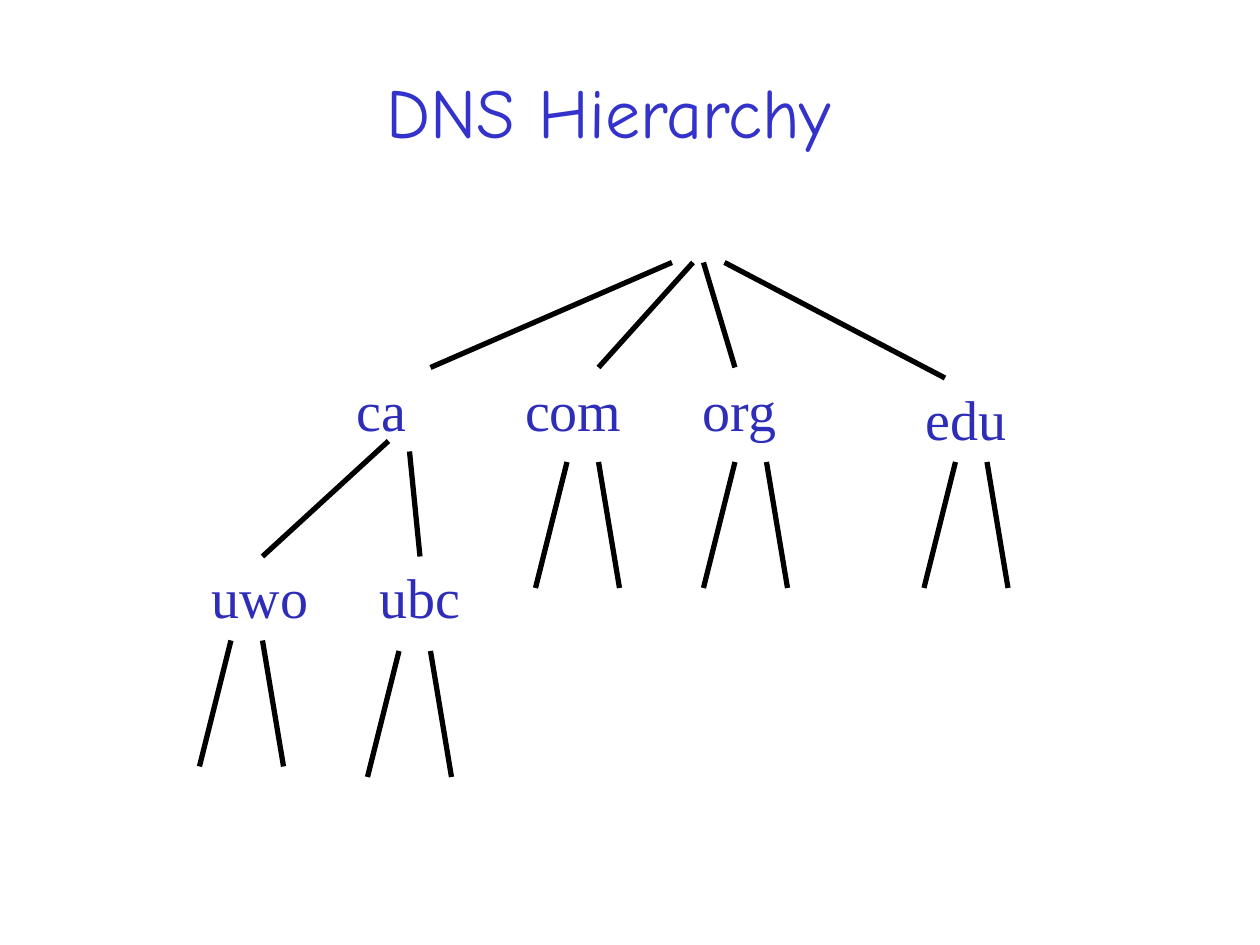
from pptx import Presentation
from pptx.dml.color import RGBColor
from pptx.enum.shapes import MSO_CONNECTOR
from pptx.enum.text import MSO_ANCHOR, MSO_AUTO_SIZE, PP_ALIGN
from pptx.oxml.ns import qn
from pptx.util import Pt
from lxml import etree

STRAIGHT = MSO_CONNECTOR.STRAIGHT
MIDDLE = MSO_ANCHOR.MIDDLE
CENTER = PP_ALIGN.CENTER
GROW = MSO_AUTO_SIZE.SHAPE_TO_FIT_TEXT

COLORS = {"title": "3333CC", "label": "2D2DB9", "line": "000000"}

# name, left, top, width
LABELS = [
    ("ca", 196.5, 211, 43),
    ("com", 293, 211, 70.5),
    ("org", 394.5, 211, 57),
    ("edu", 522, 216, 61),
    ("uwo", 114, 318, 70.5),
    ("ubc", 210, 318, 61),
]
# start x, start y, end x, end y
BRANCHES = [
    (384, 150, 246, 210),
    (396, 150, 342, 210),
    (402, 150, 420, 210),
    (414, 150, 540, 216),
    (222, 252, 150, 318),
    (234, 258, 240, 318),
]
# start of the left prong
FORKS = [(324, 264), (420, 264), (546, 264), (132, 366), (228, 372)]


def add_text(slide, text, box, font, size, color):
    shape = slide.shapes.add_textbox(*[Pt(v) for v in box])
    frame = shape.text_frame
    frame.text = text
    run = frame.paragraphs[0].runs[0]
    run.font.name = font
    run.font.size = Pt(size)
    run.font.color.rgb = RGBColor.from_string(COLORS[color])
    return frame


def add_title(slide, text):
    frame = add_text(slide, text, (42, 18, 612, 90), "Comic Neue", 40, "title")
    frame.word_wrap = True
    frame.vertical_anchor = MIDDLE
    frame.paragraphs[0].alignment = CENTER


def add_label(slide, name, left, top, width):
    box = (left, top, width, 46)
    frame = add_text(slide, name, box, "Times New Roman", 32, "label")
    frame.word_wrap = False
    frame.auto_size = GROW


def add_line(slide, *ends):
    line = slide.shapes.add_connector(STRAIGHT, *[Pt(v) for v in ends])
    line.line.width = Pt(3)
    line.line.color.rgb = RGBColor.from_string(COLORS["line"])
    etree.SubElement(line._element.spPr, qn("a:effectLst"))


def add_fork(slide, x, y):
    """Draw the two open branches below a name."""
    add_line(slide, x, y, x - 18, y + 72)
    add_line(slide, x + 18, y, x + 30, y + 72)


def main():
    deck = Presentation()
    deck.slide_width, deck.slide_height = Pt(720), Pt(540)
    slide = deck.slides.add_slide(deck.slide_layouts[6])
    add_title(slide, "DNS Hierarchy")
    for label in LABELS:
        add_label(slide, *label)
    for branch in BRANCHES:
        add_line(slide, *branch)
    for fork in FORKS:
        add_fork(slide, *fork)
    deck.save("out.pptx")


if __name__ == "__main__":
    main()
